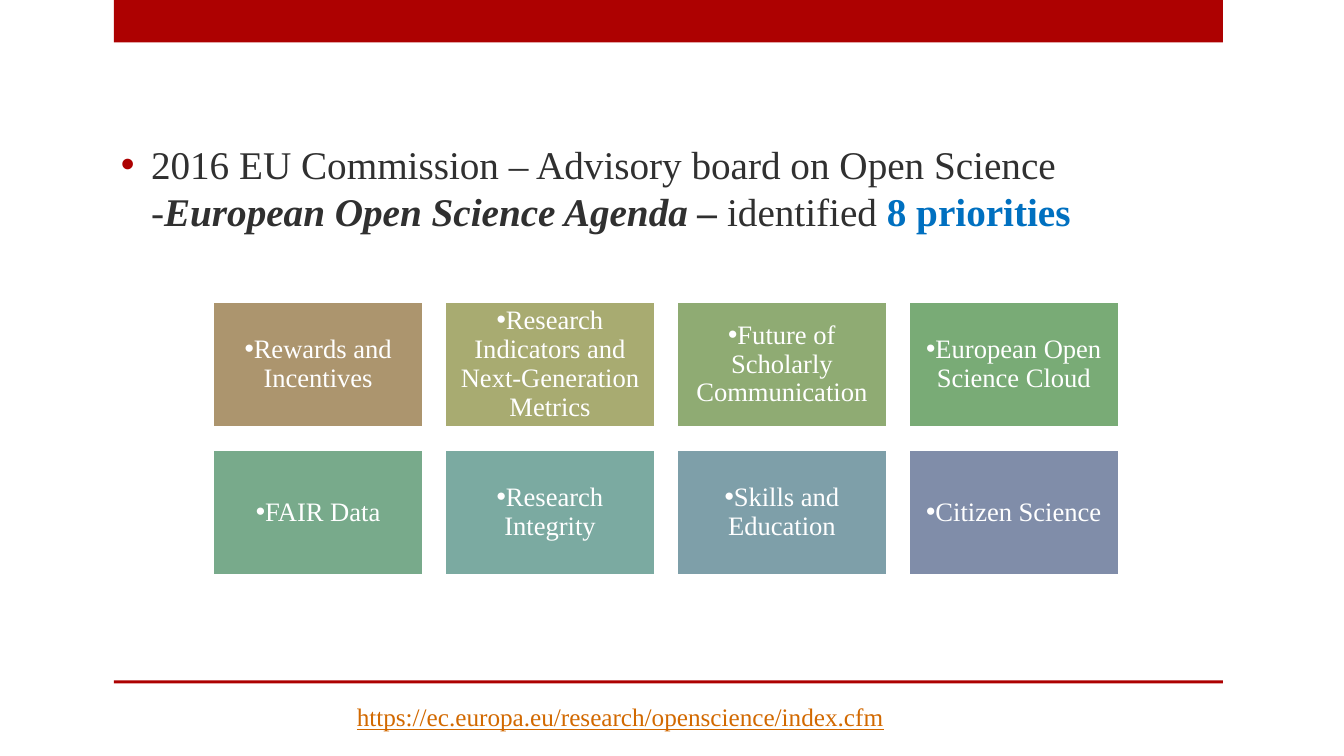
import dataclasses

import lxml.etree
import pptx
import pptx.dml.color
import pptx.enum.shapes
import pptx.enum.text
import pptx.oxml.ns
import pptx.util

Inches = pptx.util.Inches
Anchor = pptx.enum.text.MSO_ANCHOR
Align = pptx.enum.text.PP_ALIGN


@dataclasses.dataclass(frozen=True)
class Theme:
    font: str = "Times New Roman"
    accent: str = "AD0101"
    body: str = "303030"
    highlight: str = "0070C0"
    link: str = "D26900"
    white: str = "FFFFFF"
    body_size: int = 28
    tile_size: int = 19
    link_size: int = 18


PRIORITIES = [
    ("Rewards and Incentives", "AC956E"),
    ("Research Indicators and Next-Generation Metrics", "A8AB71"),
    ("Future of Scholarly Communication", "8FAB73"),
    ("European Open Science Cloud", "79AB76"),
    ("FAIR Data", "78AA8B"),
    ("Research Integrity", "7BAAA1"),
    ("Skills and Education", "7E9FA9"),
    ("Citizen Science", "808DA9"),
]
COLUMNS = 4
GRID_LEFT, GRID_TOP = 2.11, 2.99
TILE_WIDTH, TILE_HEIGHT = 2.09, 1.25
COLUMN_STEP, ROW_STEP = 2.3, 1.47


def rgb(value):
    return pptx.dml.color.RGBColor.from_string(value)


def apply(target, values):
    for name, value in values.items():
        setattr(target, name, value)


class SlideBuilder:
    def __init__(self, slide, theme):
        self.slide = slide
        self.theme = theme

    def add_words(self, paragraph, text, size, color, **formats):
        run = paragraph.add_run()
        run.text = text
        apply(run.font, {"name": self.theme.font, "size": pptx.util.Pt(size), **formats})
        run.font.color.rgb = rgb(color)

    def bullet(self, paragraph, color, indent=0):
        """Give the paragraph a round bullet with a hanging indent in inches."""
        properties = paragraph._p.get_or_add_pPr()
        properties.set("marL", str(Inches(indent)))
        properties.set("indent", str(-Inches(indent)))
        qn = pptx.oxml.ns.qn
        bullet_color = lxml.etree.SubElement(properties, qn("a:buClr"))
        lxml.etree.SubElement(bullet_color, qn("a:srgbClr"), val=color)
        lxml.etree.SubElement(properties, qn("a:buFont"), typeface="Arial")
        lxml.etree.SubElement(properties, qn("a:buChar"), char="•")

    def rectangle(self, left, top, width, height, fill):
        rectangle = self.slide.shapes.add_shape(
            pptx.enum.shapes.MSO_SHAPE.RECTANGLE,
            Inches(left), Inches(top), Inches(width), Inches(height))
        rectangle.shadow.inherit = False
        rectangle.fill.solid()
        rectangle.fill.fore_color.rgb = rgb(fill)
        rectangle.line.fill.background()
        return rectangle

    def text_frame(self, left, top, width, height, **formats):
        frame = self.slide.shapes.add_textbox(
            Inches(left), Inches(top), Inches(width), Inches(height)).text_frame
        apply(frame, formats)
        return frame

    def tile(self, left, top, label, fill):
        tile = self.rectangle(left, top, TILE_WIDTH, TILE_HEIGHT, fill)
        tile.line.color.rgb = rgb(self.theme.white)
        tile.line.width = pptx.util.Pt(1.75)
        margins = ("margin_left", "margin_top", "margin_right", "margin_bottom")
        apply(tile.text_frame, {
            "word_wrap": True, "vertical_anchor": Anchor.MIDDLE,
            **dict.fromkeys(margins, Inches(0.08))})
        paragraph = tile.text_frame.paragraphs[0]
        apply(paragraph, {"alignment": Align.CENTER, "line_spacing": 0.9})
        self.bullet(paragraph, self.theme.white)
        self.add_words(paragraph, label, self.theme.tile_size, self.theme.white)

    def statement(self):
        theme = self.theme
        frame = self.text_frame(1.1, 0.71, 11, 2.8, word_wrap=True,
                                vertical_anchor=Anchor.MIDDLE, margin_bottom=Inches(0.55))
        paragraph = frame.paragraphs[0]
        self.bullet(paragraph, theme.accent, 0.3)
        for text, color, formats in (
            ("2016 EU Commission – Advisory board on Open Science -", theme.body, {}),
            ("European Open Science Agenda – ", theme.body, {"bold": True, "italic": True}),
            ("identified ", theme.body, {}),
            ("8 priorities", theme.highlight, {"bold": True}),
        ):
            self.add_words(paragraph, text, theme.body_size, color, **formats)

    def web_address(self, text):
        frame = self.text_frame(3.44, 6.91, 5.48, 0.4, word_wrap=False)
        self.add_words(frame.paragraphs[0], text, self.theme.link_size, self.theme.link,
                       underline=True)


def main():
    presentation = pptx.Presentation()
    apply(presentation, {"slide_width": Inches(13.33), "slide_height": Inches(7.5)})
    theme = Theme()
    builder = SlideBuilder(
        presentation.slides.add_slide(presentation.slide_layouts[6]), theme)

    for top, height in ((0, 0.42), (6.75, 0.03)):
        builder.rectangle(1.13, top, 11, height, theme.accent)
    builder.statement()
    for index, (label, fill) in enumerate(PRIORITIES):
        row, column = divmod(index, COLUMNS)
        builder.tile(GRID_LEFT + column * COLUMN_STEP, GRID_TOP + row * ROW_STEP, label, fill)
    builder.web_address("https://ec.europa.eu/research/openscience/index.cfm")

    presentation.save("out.pptx")


if __name__ == "__main__":
    main()
